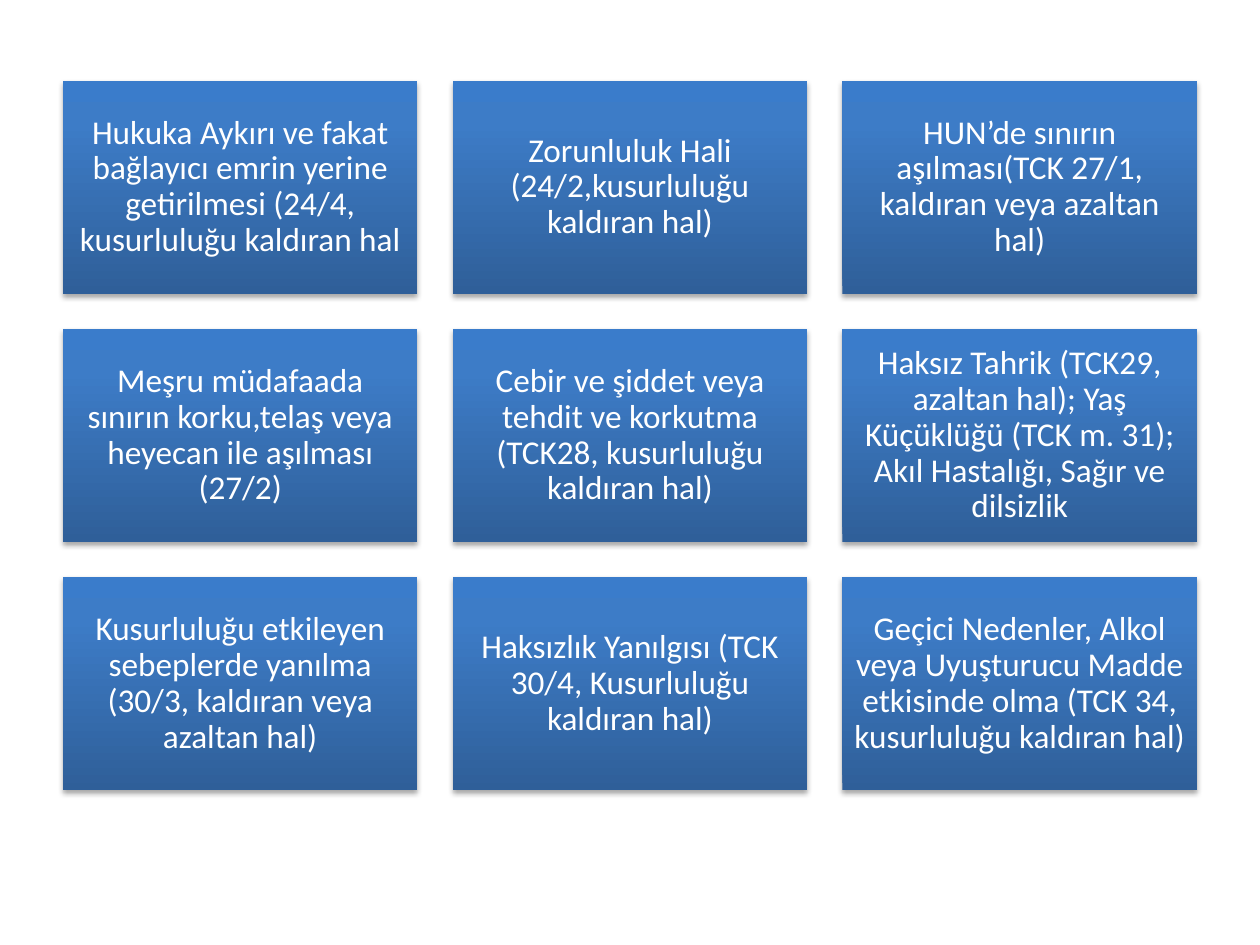
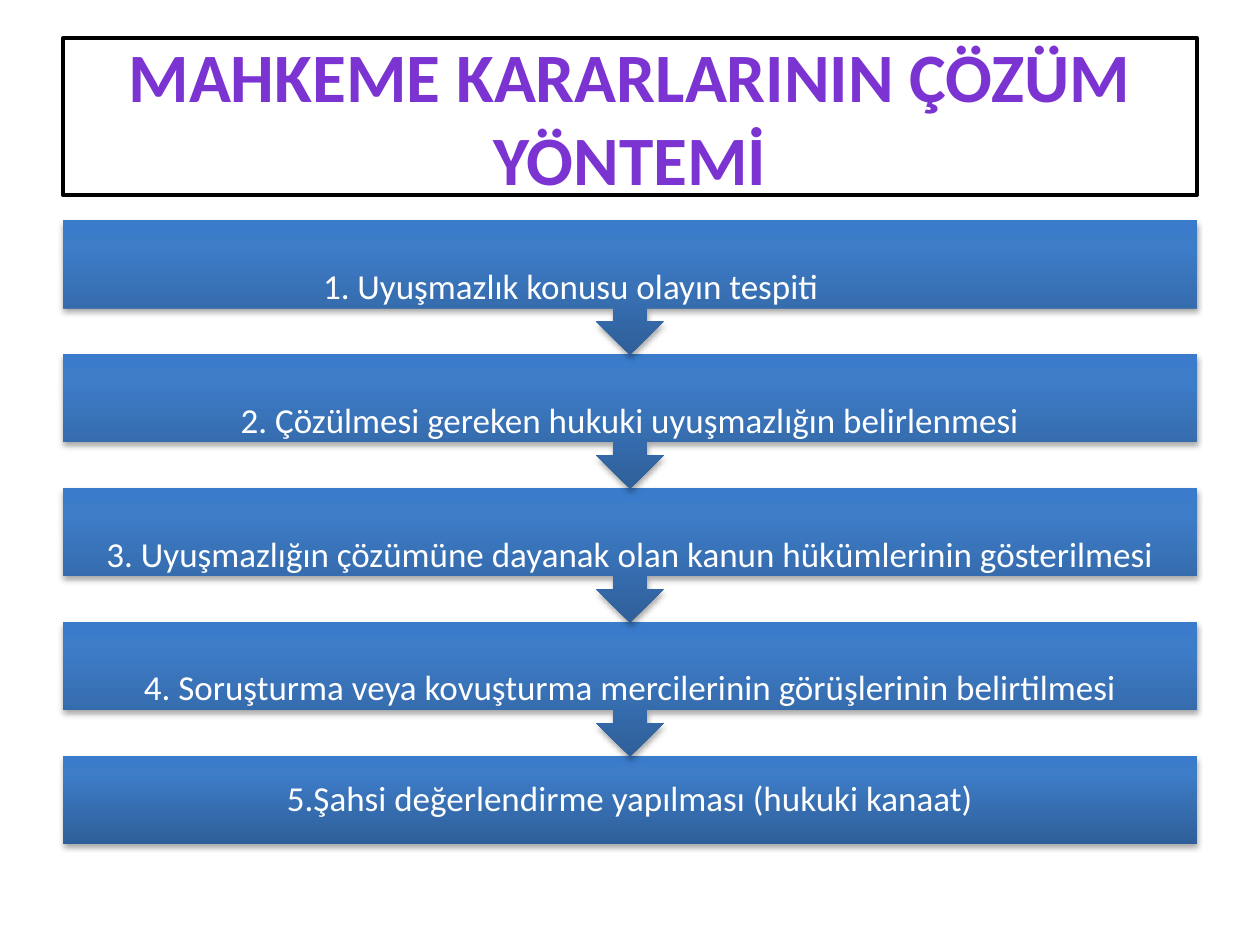
from dataclasses import dataclass

from lxml import etree
from pptx import Presentation
from pptx import util as u
from pptx.dml.color import RGBColor
from pptx.enum import shapes, text
from pptx.oxml import ns

COLORS = {
    "white": "FFFFFF", "black": "000000",
    "deep": "2F5F99", "blue": "3D7CC7", "bright": "3A7CCB",
    "plum": "3D1B67", "violet": "7B34D2", "purple": "7330C4", "outline": "5E457C",
}
FONT = "Calibri"
PANEL_STOPS = ((0, "deep"), (80, "blue"), (100, "bright"))
TITLE_STOPS = ((0, "plum"), (43, "violet"), (48, "purple"), (100, "plum"))

# Page grid, in inches
MARGIN, CONTENT_W = 0.5, 9
COLUMNS, GAP = 3, 0.28
CARD_W = (CONTENT_W - GAP * (COLUMNS - 1)) / COLUMNS
CARD_TOP, CARD_H = 0.64, 1.69
STEP_TOP, LAST_STEP_TOP, STEP_H, BAND_H = 1.75, 6, 1.07, 0.7

DEFENCES = (
    "Hukuka Aykırı ve fakat bağlayıcı emrin yerine getirilmesi (24/4, kusurluluğu kaldıran hal",
    "Zorunluluk Hali (24/2,kusurluluğu kaldıran hal)",
    "HUN’de sınırın aşılması(TCK 27/1, kaldıran veya azaltan hal)",
    "Meşru müdafaada sınırın korku,telaş veya heyecan ile aşılması (27/2)",
    "Cebir ve şiddet veya tehdit ve korkutma (TCK28, kusurluluğu kaldıran hal)",
    "Haksız Tahrik (TCK29, azaltan hal); Yaş Küçüklüğü (TCK m. 31); "
    "Akıl Hastalığı, Sağır ve dilsizlik",
    "Kusurluluğu etkileyen sebeplerde yanılma (30/3, kaldıran veya azaltan hal)",
    "Haksızlık Yanılgısı (TCK 30/4, Kusurluluğu kaldıran hal)",
    "Geçici Nedenler, Alkol veya Uyuşturucu Madde etkisinde olma "
    "(TCK 34, kusurluluğu kaldıran hal)",
)


@dataclass(frozen=True)
class Box:
    left: float
    top: float
    width: float
    height: float

    def emu(self) -> list:
        return [u.Inches(v) for v in (self.left, self.top, self.width, self.height)]


@dataclass(frozen=True)
class Step:
    label: str
    right_inset: float = 0.16


STEPS = (
    Step("1. Uyuşmazlık konusu olayın tespiti", right_inset=1.1),
    Step("2. Çözülmesi gereken hukuki uyuşmazlığın belirlenmesi"),
    Step("3. Uyuşmazlığın çözümüne dayanak olan kanun hükümlerinin gösterilmesi"),
    Step("4. Soruşturma veya kovuşturma mercilerinin görüşlerinin belirtilmesi"),
    Step("5.Şahsi değerlendirme yapılması (hukuki kanaat)"),
)


def rgb(name: str) -> RGBColor:
    return RGBColor.from_string(COLORS[name])


def xml(tag: str, attributes: str, body: str):
    """Build one DrawingML element."""
    return etree.fromstring(f'<a:{tag} {ns.nsdecls("a")} {attributes}>{body}</a:{tag}>')


def gradient(stops: tuple, angle: int):
    gs = "".join(f'<a:gs pos="{pos * 1000}"><a:srgbClr val="{COLORS[name]}"/></a:gs>'
                 for pos, name in stops)
    return xml("gradFill", 'rotWithShape="1"',
               f'<a:gsLst>{gs}</a:gsLst><a:lin ang="{angle * 60000}" scaled="0"/>')


def write(sp, label: str, size: float, color: str = "white", spacing: float = 0.9):
    """Put centred text in a shape and return its run."""
    tf = sp.text_frame
    tf.word_wrap = True
    tf.vertical_anchor = text.MSO_ANCHOR.MIDDLE
    p = tf.paragraphs[0]
    p.text = label
    p.alignment = text.PP_ALIGN.CENTER
    p.line_spacing = spacing
    r = p.runs[0]
    r.font.name, r.font.size = FONT, u.Pt(size)
    r.font.color.rgb = rgb(color)
    return r


def set_insets(sp, inset: float, right: float) -> None:
    tf = sp.text_frame
    tf.margin_left = tf.margin_top = tf.margin_bottom = u.Inches(inset)
    tf.margin_right = u.Inches(right)


def add_panel(slide, box: Box, kind=shapes.MSO_SHAPE.RECTANGLE):
    """Add a blue gradient shape with a soft shadow below it."""
    sp = slide.shapes.add_shape(kind, *box.emu())
    sp.line.fill.background()
    sp_pr = sp.element.spPr
    sp_pr.insert(2, gradient(PANEL_STOPS, 270))
    sp_pr.append(xml(
        "effectLst", "",
        '<a:outerShdw blurRad="40000" dist="23000" dir="5400000" rotWithShape="0">'
        f'<a:srgbClr val="{COLORS["black"]}"><a:alpha val="35000"/></a:srgbClr>'
        '</a:outerShdw>'))
    return sp


def add_title(slide, label: str) -> None:
    sp = slide.shapes.add_shape(shapes.MSO_SHAPE.RECTANGLE,
                                *Box(MARGIN, 0.3, CONTENT_W, 1.25).emu())
    sp.shadow.inherit = False
    sp.fill.solid()
    sp.fill.fore_color.rgb = rgb("white")
    sp.line.color.rgb = rgb("black")
    sp.line.width = u.Pt(2)
    r = write(sp, label, 39.6, "violet", 1.0)
    r.font.bold = True
    # Gradient letters with a thin outline
    r_pr = r._r.get_or_add_rPr()
    r_pr.replace(r_pr.find(ns.qn("a:solidFill")), gradient(TITLE_STOPS, 90))
    r_pr.insert(0, xml("ln", 'w="9000"',
                       f'<a:solidFill><a:srgbClr val="{COLORS["outline"]}"/></a:solidFill>'))


def build_defences(slide) -> None:
    for i, label in enumerate(DEFENCES):
        row, col = divmod(i, COLUMNS)
        card = add_panel(slide, Box(MARGIN + col * (CARD_W + GAP),
                                    CARD_TOP + row * (CARD_H + GAP), CARD_W, CARD_H))
        set_insets(card, 0.08, 0.08)
        write(card, label, 19)


def build_method(slide) -> None:
    add_title(slide, "MAHKEME KARARLARININ ÇÖZÜM YÖNTEMİ")
    last = len(STEPS) - 1
    pitch = (LAST_STEP_TOP - STEP_TOP) / last
    # Drawn bottom up, so each arrow lies over the next band
    for i, step in reversed(list(enumerate(STEPS))):
        box = Box(MARGIN, STEP_TOP + i * pitch, CONTENT_W,
                  BAND_H if i == last else STEP_H)
        if i == last:
            label = add_panel(slide, box)
        else:
            add_panel(slide, box, shapes.MSO_SHAPE.DOWN_ARROW_CALLOUT)
            label = slide.shapes.add_textbox(*box.emu())
        set_insets(label, 0.16, step.right_inset)
        write(label, step.label, 20)


def main() -> None:
    prs = Presentation()
    prs.slide_width, prs.slide_height = u.Inches(10), u.Inches(7.5)
    for build in (build_defences, build_method):
        build(prs.slides.add_slide(prs.slide_layouts[6]))
    prs.save("out.pptx")


if __name__ == "__main__":
    main()
